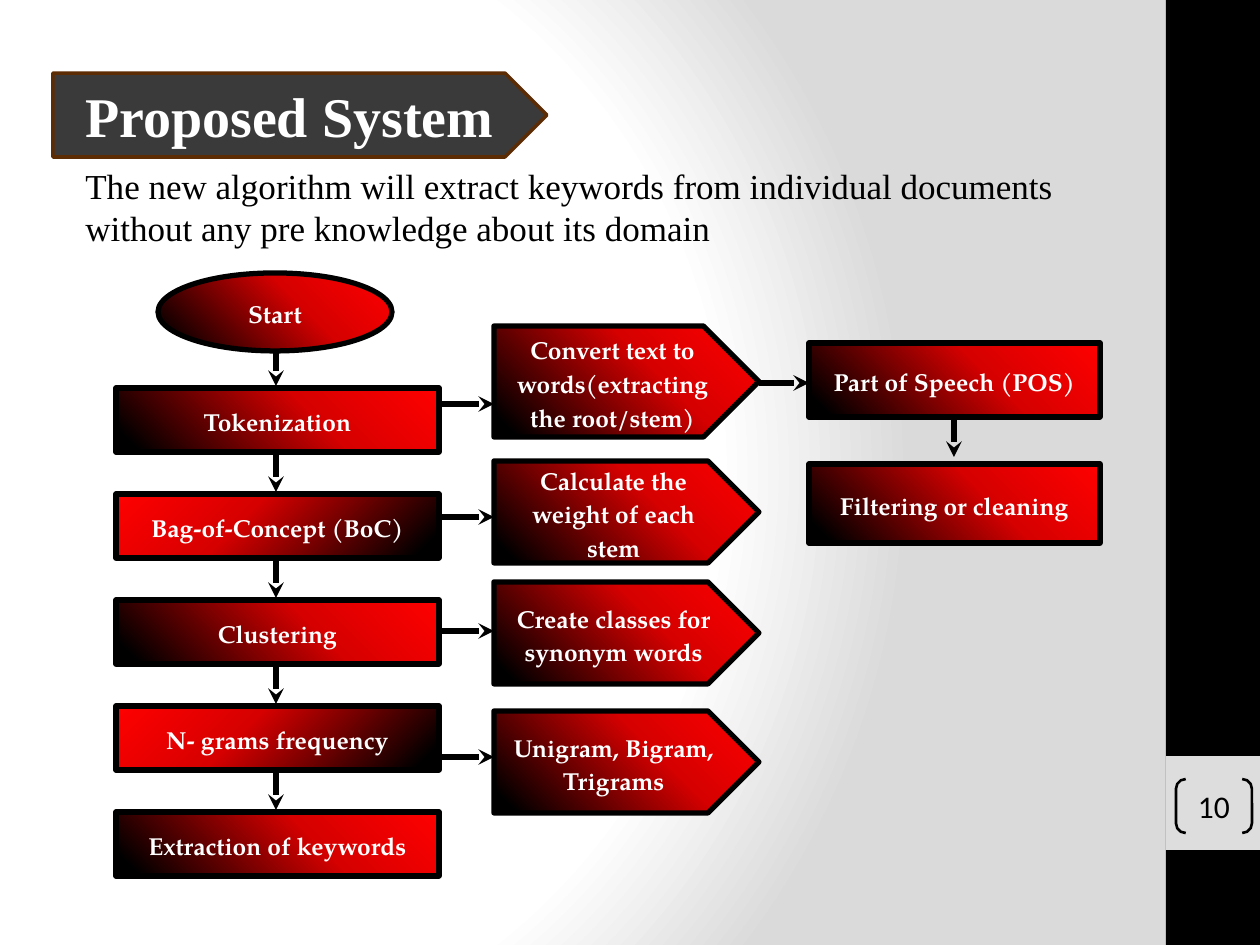
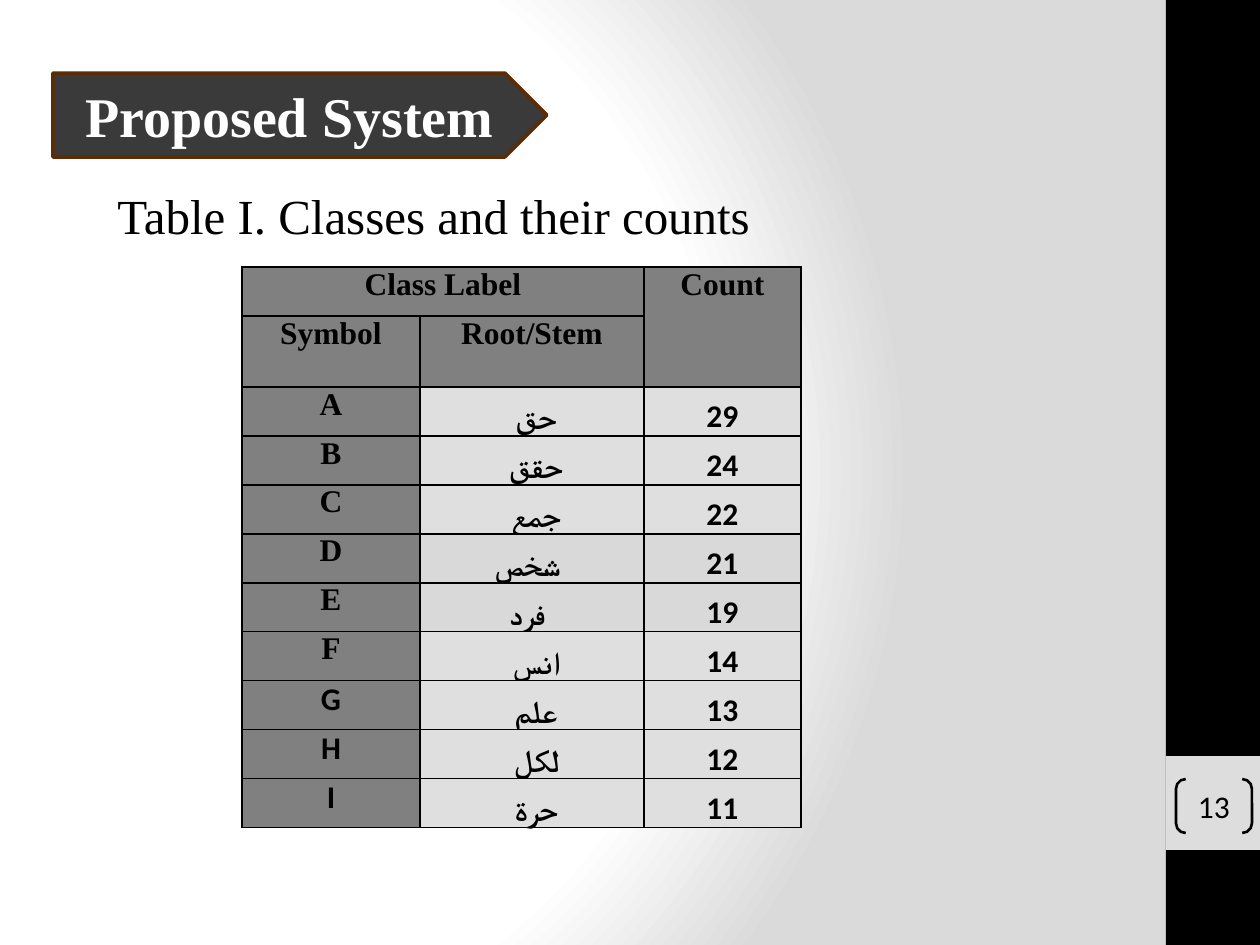
from lxml import etree
from pptx import Presentation
from pptx.dml.color import RGBColor
from pptx.enum.shapes import MSO_CONNECTOR, MSO_SHAPE
from pptx.enum.text import MSO_ANCHOR, PP_ALIGN
from pptx.oxml.ns import qn
from pptx.util import Emu, Pt

RECT = MSO_SHAPE.RECTANGLE
PENTAGON = MSO_SHAPE.PENTAGON
OVAL = MSO_SHAPE.OVAL
BRACKETS = MSO_SHAPE.DOUBLE_BRACKET
STRAIGHT = MSO_CONNECTOR.STRAIGHT
CENTER = PP_ALIGN.CENTER
LEFT = PP_ALIGN.LEFT
TOP = MSO_ANCHOR.TOP
MIDDLE = MSO_ANCHOR.MIDDLE
BOTTOM = MSO_ANCHOR.BOTTOM

EMU_PER_PX = 914400 / 126
COLORS = {
    "black": "000000",
    "white": "FFFFFF",
    "page_edge": "DADADA",
    "number_box": "DDDDDD",
    "title": "3A3A3A",
    "title_edge": "5C2C04",
    "deep_red": "D70000",
    "red": "FF0000",
    "label_cell": "808080",
    "value_cell": "DFDFDF",
    "value_cell_dim": "D9D9D9",
}
SERIF = "Times New Roman"
SANS = "Calibri"
FLOW_FONT = "TeX Gyre Pagella"

PAGE_STOPS = [(0, "white"), (75, "white"), (100, "page_edge")]
FLOW_STOPS = [(6, "black"), (61, "deep_red"), (100, "red")]
PAGE_FOCUS = {"l": 20, "t": 50, "r": 100, "b": 50}
CORNER_FOCUS = {"l": 100, "t": 100}

STEP_LEFT, STEP_TOP, STEP_WIDTH, STEP_HEIGHT = 116, 388, 323, 64
STEP_PITCH = 106
STEP_MIDDLE = 276
ARROW_LENGTH = 37
DETAIL_LEFT, DETAIL_WIDTH = 494, 265
POS_LEFT, POS_WIDTH = 809, 291

STEPS = [
    ("Tokenization", None),
    ("Bag-of-Concept (BoC)", CORNER_FOCUS),
    ("Clustering", None),
    ("N- grams frequency", CORNER_FOCUS),
    ("Extraction of keywords", None),
]
DETAILS = [
    ("Convert text to words(extracting the root/stem)", 326, 111, 404),
    ("Calculate the weight of each stem", 461, 102, 517),
    ("Create classes for synonym words", 582, 102, 631),
    ("Unigram, Bigram, Trigrams", 711, 102, 757),
]
CLASSES = [
    ("A", "حق ", "29"),
    ("B", "حقق ", "24"),
    ("C", "جمع ", "22"),
    ("D", "شخص ", "21"),
    ("E", "فرد ", "19"),
    ("F", "انس ", "14"),
    ("G", "علم ", "13"),
    ("H", "لكل ", "12"),
    ("I", "حرة ", "11"),
]
LEFT_TO_RIGHT_CLASSES = "DE"
SANS_CLASSES = "GHI"


def px(length):
    return Emu(round(length * EMU_PER_PX))


def rgb(name):
    return RGBColor.from_string(COLORS[name])


def paint_gradient(owner, stops, focus=None):
    gradient = owner.element.find(".//" + qn("a:gradFill"))
    for child in list(gradient):
        gradient.remove(child)
    stop_list = etree.SubElement(gradient, qn("a:gsLst"))
    for position, color in stops:
        stop = etree.SubElement(stop_list, qn("a:gs"), pos=str(position * 1000))
        etree.SubElement(stop, qn("a:srgbClr"), val=COLORS[color])
    if focus is None:
        etree.SubElement(gradient, qn("a:lin"), ang=str(315 * 60000), scaled="0")
    else:
        circle = etree.SubElement(gradient, qn("a:path"), path="circle")
        edges = {edge: str(share * 1000) for edge, share in focus.items()}
        etree.SubElement(circle, qn("a:fillToRect"), edges)


def write(frame, text, font, size, color="black", bold=False, align=CENTER):
    paragraph = frame.paragraphs[0]
    paragraph.text = text
    paragraph.alignment = align
    paragraph.font.name = font
    paragraph.font.size = Pt(size)
    paragraph.font.bold = bold
    paragraph.font.color.rgb = rgb(color)
    return paragraph


def add_block(slide, kind, box, fill=None, edge=None, edge_width=1):
    block = slide.shapes.add_shape(kind, *map(px, box))
    block.shadow.inherit = False
    if fill:
        block.fill.solid()
        block.fill.fore_color.rgb = rgb(fill)
    else:
        block.fill.background()
    if edge:
        block.line.color.rgb = rgb(edge)
        block.line.width = Pt(edge_width)
    else:
        block.line.fill.background()
    return block


def add_flow_block(slide, kind, box, text, focus=None):
    block = add_block(slide, kind, box, edge="black", edge_width=3)
    block.fill.gradient()
    paint_gradient(block, FLOW_STOPS, focus)
    label = write(block.text_frame, text, FLOW_FONT, 14, "white", bold=True)
    label.line_spacing = 1.15
    label.space_after = Pt(10)


def add_arrow(slide, x1, y1, x2, y2):
    arrow = slide.shapes.add_connector(STRAIGHT, px(x1), px(y1), px(x2), px(y2))
    arrow.line.color.rgb = rgb("black")
    arrow.line.width = Pt(3)
    line = arrow.element.spPr.find(qn("a:ln"))
    etree.SubElement(line, qn("a:tailEnd"), type="stealth")
    etree.SubElement(arrow.element.spPr, qn("a:effectLst"))


def add_text(slide, box, text, size, wrap):
    frame = slide.shapes.add_textbox(*map(px, box)).text_frame
    frame.word_wrap = wrap
    frame.vertical_anchor = TOP
    write(frame, text, SERIF, size, align=LEFT)


def add_page(prs, number):
    slide = prs.slides.add_slide(prs.slide_layouts[6])
    slide.background.fill.gradient()
    paint_gradient(slide, PAGE_STOPS, PAGE_FOCUS)
    add_block(slide, RECT, (1166, 0, 94, 945), "black")
    add_block(slide, RECT, (1166, 756, 94, 94), "number_box")
    badge = add_block(slide, BRACKETS, (1176, 779, 76, 54), edge="black", edge_width=1.5)
    badge.adjustments[0] = 0.18
    frame = badge.text_frame
    frame.margin_left = frame.margin_right = frame.margin_top = frame.margin_bottom = 0
    write(frame, str(number), SANS, 18)
    title = add_block(slide, PENTAGON, (53, 73, 494, 84), "title", "title_edge", 2)
    write(title.text_frame, "Proposed System", SERIF, 32, "white", bold=True)
    return slide


def fill_cell(cell, text, fill, font=SERIF, anchor=TOP, rtl=False):
    properties = cell._tc.get_or_add_tcPr()
    for side in ("lnL", "lnR", "lnT", "lnB"):
        border = etree.SubElement(properties, qn("a:" + side), w=str(Pt(1)))
        solid = etree.SubElement(border, qn("a:solidFill"))
        etree.SubElement(solid, qn("a:srgbClr"), val=COLORS["black"])
    cell.fill.solid()
    cell.fill.fore_color.rgb = rgb(fill)
    cell.margin_left = cell.margin_right = px(9)
    cell.margin_top = cell.margin_bottom = 0
    cell.vertical_anchor = anchor
    paragraph = write(cell.text_frame, text, font, 18, bold=True)
    if rtl:
        paragraph._p.get_or_add_pPr().set("rtl", "1")


def add_class_table(slide):
    widths = (178, 224, 157)
    heights = (49, 71) + (49,) * len(CLASSES)
    frame = slide.shapes.add_table(
        len(heights), len(widths), px(242), px(267), px(sum(widths)), px(sum(heights))
    )
    table = frame.table
    table.first_row = table.horz_banding = False
    for column, width in zip(table.columns, widths):
        column.width = px(width)
    for row, height in zip(table.rows, heights):
        row.height = px(height)

    headings = [("Class Label", "", "Count"), ("Symbol", "Root/Stem", "")]
    for row, labels in enumerate(headings):
        for column, label in enumerate(labels):
            fill_cell(table.cell(row, column), label, "label_cell")
    table.cell(0, 0).merge(table.cell(0, 1))
    table.cell(0, 2).merge(table.cell(1, 2))

    for row, (symbol, stem, count) in enumerate(CLASSES, len(headings)):
        rtl = symbol not in LEFT_TO_RIGHT_CLASSES
        shade = "value_cell" if rtl else "value_cell_dim"
        symbol_font = SANS if symbol in SANS_CLASSES else SERIF
        fill_cell(table.cell(row, 0), symbol, "label_cell", symbol_font)
        fill_cell(table.cell(row, 1), stem, shade, SANS, BOTTOM, rtl)
        fill_cell(table.cell(row, 2), count, shade, SANS, BOTTOM)


def add_flowchart(slide):
    add_flow_block(slide, OVAL, (158, 273, 234, 78), "Start")
    for index, (step, focus) in enumerate(STEPS):
        top = STEP_TOP + index * STEP_PITCH
        add_flow_block(slide, RECT, (STEP_LEFT, top, STEP_WIDTH, STEP_HEIGHT), step, focus)
        add_arrow(slide, STEP_MIDDLE, top - 2 - ARROW_LENGTH, STEP_MIDDLE, top - 2)
    for detail, top, height, arrow_y in DETAILS:
        add_flow_block(slide, PENTAGON, (DETAIL_LEFT, top, DETAIL_WIDTH, height), detail)
        add_arrow(slide, STEP_LEFT + STEP_WIDTH, arrow_y, DETAIL_LEFT, arrow_y)
    add_flow_block(slide, RECT, (POS_LEFT, 343, POS_WIDTH, 74), "Part of Speech (POS)")
    add_flow_block(slide, RECT, (POS_LEFT, 464, POS_WIDTH, 79), "Filtering or cleaning")
    add_arrow(slide, DETAIL_LEFT + DETAIL_WIDTH, 383, POS_LEFT, 383)
    add_arrow(slide, 954, 420, 954, 420 + ARROW_LENGTH)


def main():
    prs = Presentation()
    prs.slide_width, prs.slide_height = px(1260), px(945)

    system = add_page(prs, 10)
    add_flowchart(system)
    add_text(
        system,
        (73, 158, 1081, 97),
        "The new algorithm will extract keywords from individual documents "
        "without any pre knowledge about its domain",
        20,
        wrap=True,
    )

    classes = add_page(prs, 13)
    add_class_table(classes)
    add_text(classes, (105, 179, 664, 108), "Table I. Classes and their counts", 28, wrap=False)

    prs.save("out.pptx")


if __name__ == "__main__":
    main()
